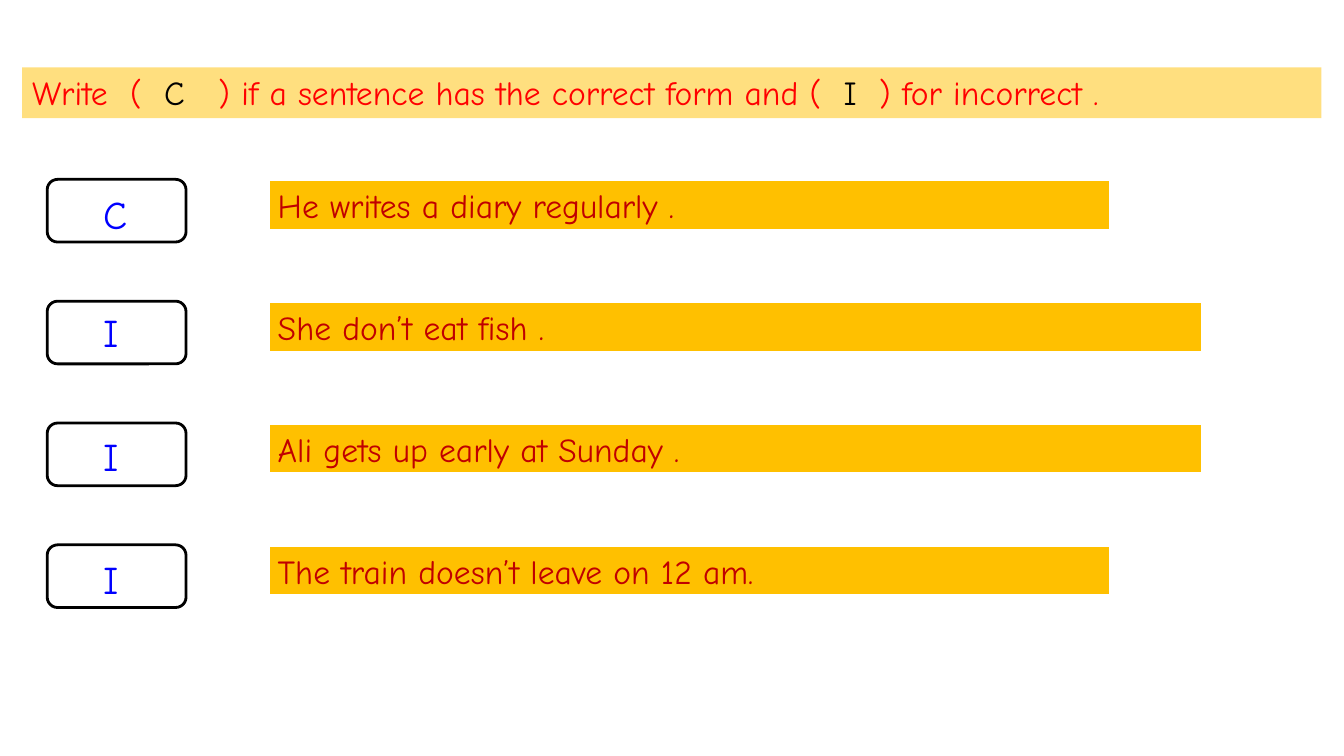
import pptx
import pptx.dml.color
import pptx.enum.shapes
import pptx.enum.text
import pptx.oxml.ns
import pptx.util
from lxml import etree

Cm = pptx.util.Cm
Pt = pptx.util.Pt
SHAPES = pptx.enum.shapes.MSO_SHAPE
ANCHORS = pptx.enum.text.MSO_ANCHOR

INSTRUCTION = [
    ("Write  (  ", "FF0000"),
    ("C", "000000"),
    ("   ) if a sentence has the correct form and (  ", "FF0000"),
    ("I", "000000"),
    ("  ) for incorrect .", "FF0000"),
]
SHORT_BAR, LONG_BAR = 21.26, 23.57
QUESTIONS = [
    ("C", 0.15, "He writes a diary regularly .", SHORT_BAR),
    ("I", 0.05, "She don’t eat fish .", LONG_BAR),
    ("I", 0.1, "Ali gets up early at Sunday .", LONG_BAR),
    ("I", 0.13, "The train doesn’t leave on 12 am.", SHORT_BAR),
]
FIRST_ROW, ROW_PITCH = 4.52, 3.07


def color(value):
    return pptx.dml.color.RGBColor.from_string(value)


def apply_format(target, values):
    for name, value in values.items():
        setattr(target, name, value)


def add_box(slide, kind, left, top, width, height, fill=None, line=None, line_width=0):
    shape = slide.shapes.add_shape(kind, Cm(left), Cm(top), Cm(width), Cm(height))
    shape.shadow.inherit = False
    if fill:
        shape.fill.solid()
        shape.fill.fore_color.rgb = color(fill)
    else:
        shape.fill.background()
    if line:
        shape.line.color.rgb = color(line)
        shape.line.width = Pt(line_width)
    else:
        shape.line.fill.background()
    return shape


def write_text(shape, runs, size, anchor=ANCHORS.TOP, margin_left=0.25):
    frame = shape.text_frame
    apply_format(frame, {
        "word_wrap": True,
        "vertical_anchor": anchor,
        "margin_left": Cm(margin_left),
    })
    paragraph = frame.paragraphs[0]
    paragraph.alignment = pptx.enum.text.PP_ALIGN.LEFT
    for text, text_color in runs:
        run = paragraph.add_run()
        run.text = text
        apply_format(run.font, {"name": "Comic Neue", "size": Pt(size)})
        run.font.color.rgb = color(text_color)


def add_instruction(slide, left, top, width, height):
    banner = add_box(slide, SHAPES.RECTANGLE, left, top, width, height, "FFC000")
    fill_color = banner.fill._xPr.find(".//" + pptx.oxml.ns.qn("a:srgbClr"))
    etree.SubElement(fill_color, pptx.oxml.ns.qn("a:alpha"), val="50000")
    write_text(banner, INSTRUCTION, 24)


def add_question(slide, left, top, answer, answer_drop, sentence, bar_width):
    add_box(slide, SHAPES.ROUNDED_RECTANGLE, left, top, 3.5, 1.58, None, "000000", 2)
    bar = add_box(slide, SHAPES.RECTANGLE, left + 5.56, top, bar_width, 1.3,
                  "FFC000", "FFFFFF", 3)
    write_text(bar, [(sentence, "C00000")], 24, ANCHORS.MIDDLE)
    answer_box = slide.shapes.add_textbox(
        Cm(left + 0.71), Cm(top + answer_drop), Cm(2.11), Cm(1.45))
    write_text(answer_box, [(answer, "0000FF")], 28, margin_left=0.7)


def main():
    presentation = pptx.Presentation()
    presentation.slide_width = Cm(33.87)
    presentation.slide_height = Cm(19.05)
    slide = presentation.slides.add_slide(presentation.slide_layouts[6])
    add_instruction(slide, 0.56, 1.7, 32.74, 1.28)
    for index, question in enumerate(QUESTIONS):
        add_question(slide, 1.19, FIRST_ROW + index * ROW_PITCH, *question)
    presentation.save("out.pptx")


if __name__ == "__main__":
    main()
